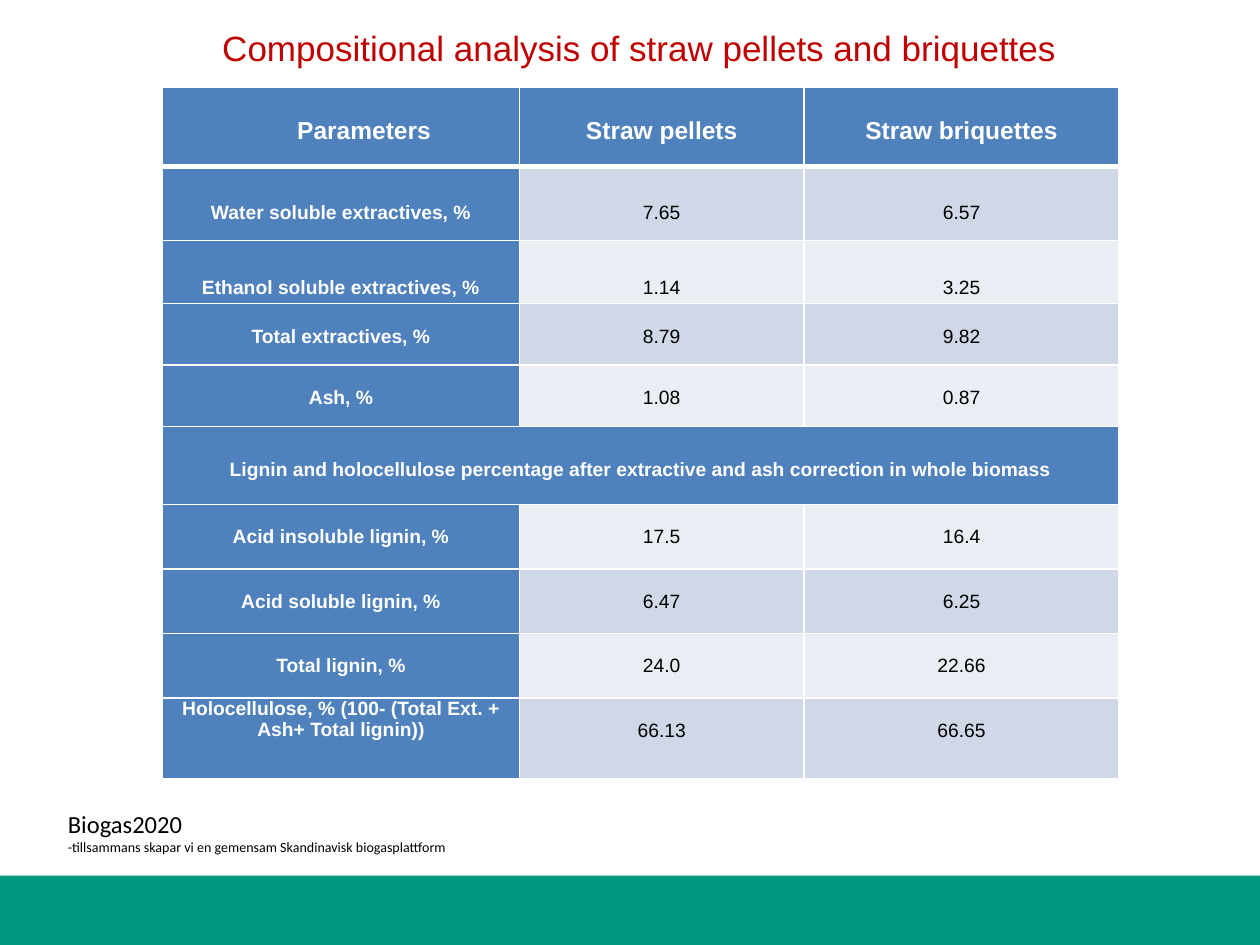
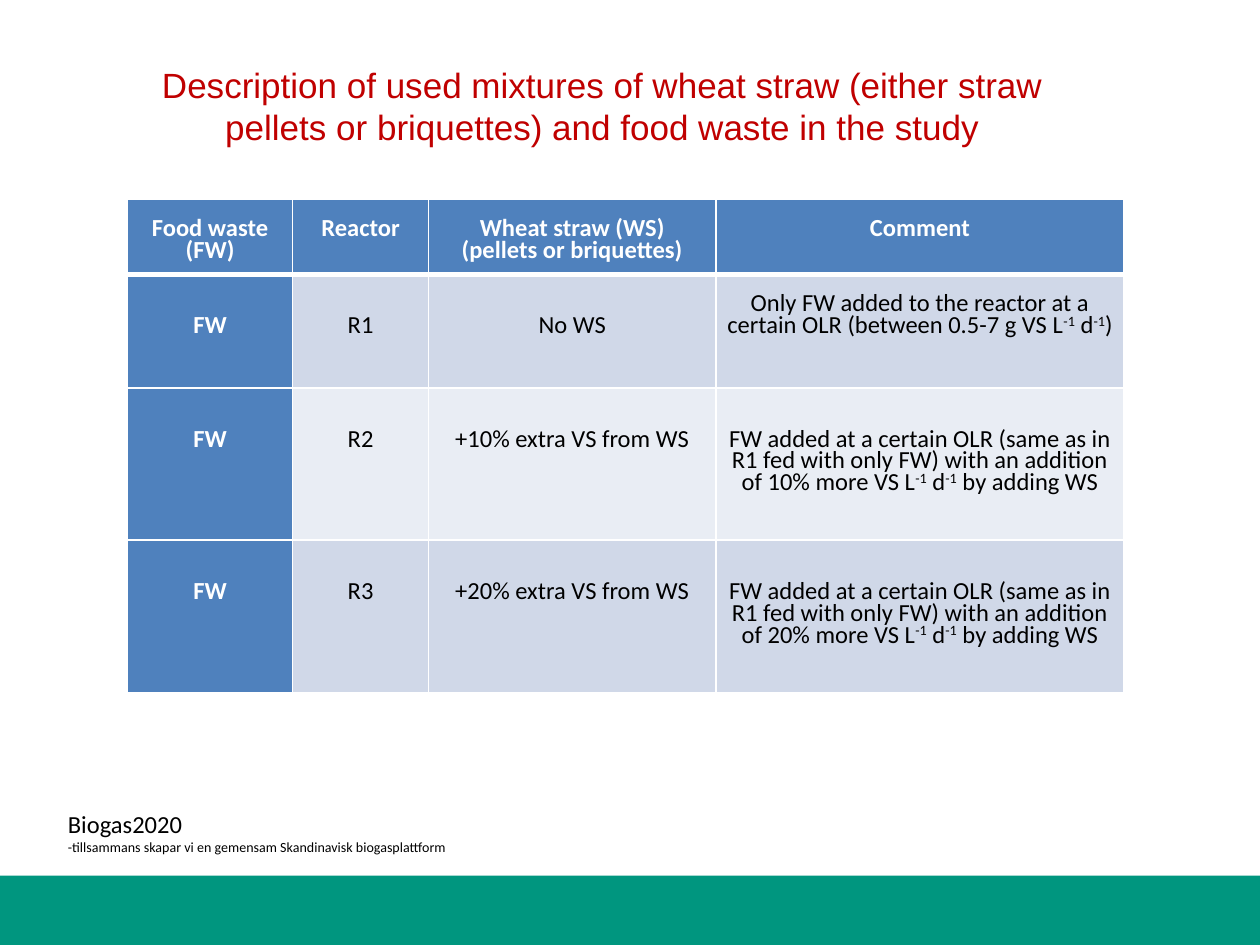
from pptx import Presentation
from pptx.util import Cm, Pt
from pptx.dml.color import RGBColor
from pptx.enum.shapes import MSO_SHAPE
from pptx.enum.text import MSO_ANCHOR, PP_ALIGN
from pptx.oxml import parse_xml
from pptx.oxml.ns import nsdecls

RED = RGBColor(0xC0, 0x00, 0x00)
GREEN = RGBColor(0x00, 0x96, 0x7F)
BLUE = RGBColor(0x4F, 0x81, 0xBD)
DARK = RGBColor(0xD0, 0xD8, 0xE8)
LIGHT = RGBColor(0xE9, 0xED, 0xF4)
WHITE = RGBColor(0xFF, 0xFF, 0xFF)
BLACK = RGBColor(0x00, 0x00, 0x00)

FOOTER = [("Biogas2020", 14),
          ("-tillsammans skapar vi en gemensam Skandinavisk biogasplattform", 8)]

# Content: lengths in cm, sizes and gaps above the text in points.
# "gaps" holds one gap per row, "own" the cells that differ;
# text between ^ marks is raised.
MIX = ("FW added at a certain OLR (same as in R1 fed with only FW) with an "
       "addition of {}% more VS L^-1^ d^-1^ by adding WS")
SLIDES = [
    dict(
        title="Compositional analysis of straw pellets and briquettes",
        box=(2.11, 0, 21.56, 1.9),
        at=(3.28, 1.75), font="Arial", head=14, body=11,
        cols=[7.19, 5.74, 6.35],
        rows=[1.6, 1.5, 1.27, 1.24, 1.24, 1.57, 1.3, 1.3, 1.3, 1.63],
        gaps=[20.5] * 3 + [12.6] * 2 + [18.6] + [12.6] * 4,
        own={(9, 0): 0}, fixed=3, shift={(0, 0): 0.93},
        cells=[
            ["Parameters", "Straw pellets", "Straw briquettes"],
            ["Water soluble extractives, %", "7.65", "6.57"],
            ["Ethanol soluble extractives, %", "1.14", "3.25"],
            ["Total extractives, %", "8.79", "9.82"],
            ["Ash, %", "1.08", "0.87"],
            ["Lignin and holocellulose percentage after extractive and ash "
             "correction in whole biomass"],
            ["Acid insoluble lignin, %", "17.5", "16.4"],
            ["Acid soluble lignin, %", "6.47", "6.25"],
            ["Total lignin, %", "24.0", "22.66"],
            ["Holocellulose, % (100- (Total Ext. + Ash+ Total lignin))",
             "66.13", "66.65"],
        ]),
    dict(
        title="Description of used mixtures of wheat straw (either straw "
              "pellets or briquettes) and food waste in the study",
        box=(2.57, 1.27, 19.15, 1.73),
        at=(2.57, 4.01), font="Calibri", head=14, body=14,
        cols=[3.33, 2.74, 5.79, 8.23],
        rows=[1.52, 2.29, 3.07, 3.07],
        gaps=[12.5, 25, 25, 25],
        own={(1, 3): 12.5}, fixed=4, shift={},
        cells=[
            ["Food waste (FW)", "Reactor",
             "Wheat straw (WS)\n(pellets or briquettes)", "Comment"],
            ["FW", "R1", "No WS",
             "Only FW added to the reactor at a certain OLR "
             "(between 0.5-7 g VS L^-1^ d^-1^)"],
            ["FW", "R2", "+10% extra VS from WS", MIX.format(10)],
            ["FW", "R3", "+20% extra VS from WS", MIX.format(20)],
        ]),
]


def add_run(para, text, size, font, color, bold=False):
    run = para.add_run()
    run.text = text
    run.font.size, run.font.name, run.font.bold = Pt(size), font, bold
    run.font.color.rgb = color
    return run


def text_box(slide, box):
    frame = slide.shapes.add_textbox(*map(Cm, box)).text_frame
    frame.word_wrap = True
    return frame


def add_frame(slide, data):
    # Band
    band = slide.shapes.add_shape(
        MSO_SHAPE.RECTANGLE, 0, Cm(17.65), Cm(25.4), Cm(1.4))
    band.shadow.inherit = False
    band.fill.solid()
    band.fill.fore_color.rgb = GREEN
    band.line.fill.background()

    # Footer
    para = text_box(slide, (1.12, 16.18, 8.38, 1.19)).paragraphs[0]
    for i, (text, size) in enumerate(FOOTER):
        if i:
            para.add_line_break()
        add_run(para, text, size, "Calibri", BLACK)

    # Title
    frame = text_box(slide, data["box"])
    frame.vertical_anchor = MSO_ANCHOR.MIDDLE
    frame.paragraphs[0].alignment = PP_ALIGN.CENTER
    add_run(frame.paragraphs[0], data["title"], 20, "Arial", RED)


def set_edges(cell, row):
    widths = {"L": 1, "R": 1, "T": 3 if row == 1 else 1,
              "B": 3 if row == 0 else 1}
    props = cell._tc.get_or_add_tcPr()
    for i, (side, width) in enumerate(widths.items()):
        props.insert(i, parse_xml(
            f'<a:ln{side} {nsdecls("a")} w="{Pt(width)}"><a:solidFill>'
            f'<a:srgbClr val="{WHITE}"/></a:solidFill></a:ln{side}>'))


def fill_cell(cell, text, row, col, data):
    strong = row == 0 or col == 0
    cell.fill.solid()
    cell.fill.fore_color.rgb = BLUE if strong else DARK if row % 2 else LIGHT
    cell.margin_left = cell.margin_right = Cm(0.18)
    cell.margin_left += Cm(data["shift"].get((row, col), 0))
    cell.margin_top = Pt(data["own"].get((row, col), data["gaps"][row]))
    cell.margin_bottom = 0
    size = data["body"] if row else data["head"]
    for i, line in enumerate(text.split("\n")):
        frame = cell.text_frame
        para = frame.add_paragraph() if i else frame.paragraphs[0]
        para.alignment = PP_ALIGN.CENTER
        if row < data["fixed"]:
            para.line_spacing = Pt(12.5)
        for j, part in enumerate(line.split("^")):
            run = add_run(para, part, size, data["font"],
                          WHITE if strong else BLACK, strong)
            if j % 2:
                run.font._element.set("baseline", "30000")


def add_grid(slide, data):
    cols, rows = data["cols"], data["rows"]
    table = slide.shapes.add_table(
        len(rows), len(cols), *map(Cm, data["at"]),
        Cm(sum(cols)), Cm(sum(rows))).table
    table.horz_banding = False
    for col, width in zip(table.columns, cols):
        col.width = Cm(width)
    for r, texts in enumerate(data["cells"]):
        table.rows[r].height = Cm(rows[r])
        if len(texts) == 1:
            table.cell(r, 0).merge(table.cell(r, len(cols) - 1))
        for c, text in enumerate(texts):
            fill_cell(table.cell(r, c), text, r, c, data)
        for c in range(len(cols)):
            set_edges(table.cell(r, c), r)


def main():
    deck = Presentation()
    deck.slide_width, deck.slide_height = Cm(25.4), Cm(19.05)
    for data in SLIDES:
        slide = deck.slides.add_slide(deck.slide_layouts[6])
        add_frame(slide, data)
        add_grid(slide, data)
    deck.save("out.pptx")


if __name__ == "__main__":
    main()
